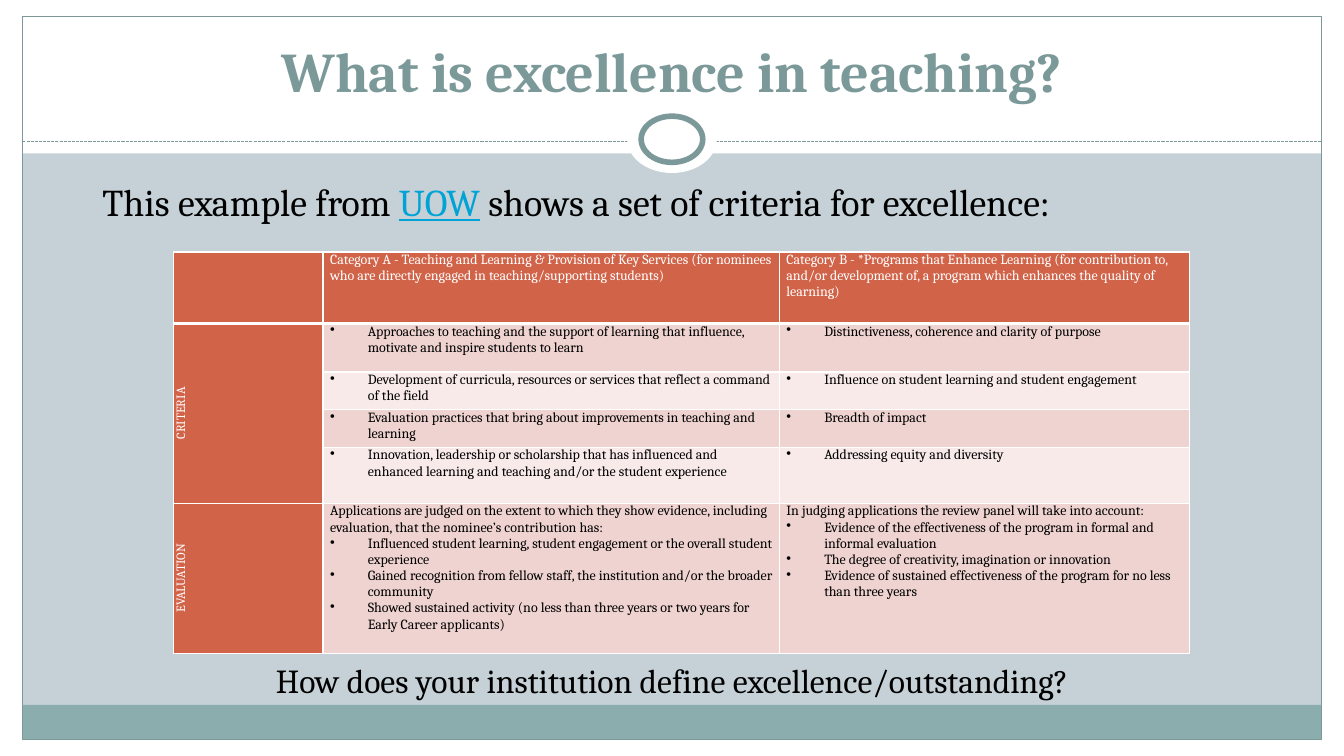
"""Builds the slide about criteria for excellence in teaching."""
from dataclasses import dataclass
from typing import Any, Optional

from lxml.etree import SubElement
from pptx import Presentation
from pptx.dml.color import RGBColor
from pptx.enum.dml import MSO_LINE
from pptx.enum.shapes import MSO_CONNECTOR, MSO_SHAPE as Preset
from pptx.enum.text import MSO_ANCHOR as Anchor, MSO_AUTO_SIZE as AutoSize, PP_ALIGN as Align
from pptx.oxml.ns import qn
from pptx.util import Pt

WIDTH, HEIGHT = 960, 540
FONT = "Cambria"
WHITE, BLACK, SAGE, BAND, MIST = "FFFFFF", "000000", "7C999A", "8CADAE", "C5D1D7"
LINK, RUST, ROSE, BLUSH = "00A3D6", "D16349", "EED3D0", "F7EAE9"
EDGE, FRAME_TOP, FRAME_BOTTOM = 16, 12, 528
RULE_Y = 100.8


@dataclass
class Panel:
    left: float
    top: float
    width: float
    height: float
    fill: Optional[str] = None
    line: Optional[str] = None
    weight: float = 0.75
    preset: Any = Preset.RECTANGLE


@dataclass
class CriteriaRow:
    height: float
    fill: str
    category_a: list[str]
    category_b: list[str]
    label: str = ""
    lead_in: bool = False
    bulleted: bool = True


MARGINS = [
    Panel(0, FRAME_BOTTOM, WIDTH, HEIGHT - FRAME_BOTTOM, WHITE),
    Panel(0, 0, WIDTH, 109.5, WHITE),
    Panel(0, 0, EDGE, HEIGHT, WHITE),
    Panel(WIDTH - EDGE, 0, EDGE, HEIGHT, WHITE),
    Panel(EDGE, 503.5, WIDTH - 2 * EDGE, 24.5, BAND),
    Panel(EDGE, FRAME_TOP, WIDTH - 2 * EDGE, FRAME_BOTTOM - FRAME_TOP, line=SAGE),
]
RINGS = [
    Panel(448, 75.6, 64, 48, WHITE, preset=Preset.OVAL),
    Panel(458, 83, 44, 33, WHITE, SAGE, 4, Preset.OVAL),
]
COLUMNS = [106.8, 326, 293]
ROWS = [
    CriteriaRow(51, RUST,
                ["Category A - Teaching and Learning & Provision of Key Services (for nominees who are "
                 "directly engaged in teaching/supporting students)"],
                ["Category B - *Programs that Enhance Learning (for contribution to, and/or development "
                 "of, a program which enhances the quality of learning)"], bulleted=False),
    CriteriaRow(34.8, ROSE,
                ["Approaches to teaching and the support of learning that influence, motivate and "
                 "inspire students to learn"],
                ["Distinctiveness, coherence and clarity of purpose"], "CRITERIA"),
    CriteriaRow(27, BLUSH,
                ["Development of curricula, resources or services that reflect a command of the field"],
                ["Influence on student learning and student engagement"]),
    CriteriaRow(26.8, ROSE,
                ["Evaluation practices that bring about improvements in teaching and learning"],
                ["Breadth of impact"]),
    CriteriaRow(40, BLUSH,
                ["Innovation, leadership or scholarship that has influenced and enhanced learning and "
                 "teaching and/or the student experience"],
                ["Addressing equity and diversity"]),
    CriteriaRow(107, ROSE,
                ["Applications are judged on the extent to which they show evidence, including "
                 "evaluation, that the nominee’s contribution has:",
                 "Influenced student learning, student engagement or the overall student experience",
                 "Gained recognition from fellow staff, the institution and/or the broader community",
                 "Showed sustained activity (no less than three years or two years for Early Career "
                 "applicants)"],
                ["In judging applications the review panel will take into account:",
                 "Evidence of the effectiveness of the program in formal and informal evaluation",
                 "The degree of creativity, imagination or innovation",
                 "Evidence of sustained effectiveness of the program for no less than three years"],
                "EVALUATION", lead_in=True),
]


def apply(target: Any, **values: Any) -> None:
    for name, value in values.items():
        setattr(target, name, value)


def paint(fill: Any, colour: str) -> None:
    fill.solid()
    fill.fore_color.rgb = RGBColor.from_string(colour)


def place(shape: Any, left: float, top: float, width: float, height: float) -> None:
    apply(shape, left=Pt(left), top=Pt(top), width=Pt(width), height=Pt(height))


def write(paragraph: Any, text: str, size: float, colour: str, bold: bool = False,
          underline: bool = False) -> None:
    run = paragraph.add_run()
    run.text = text
    apply(run.font, name=FONT, size=Pt(size), bold=bold, underline=underline)
    paint(run.font.fill, colour)


def set_bullet(paragraph: Any, mark: Optional[str], hang: float) -> None:
    properties = paragraph._p.get_or_add_pPr()
    properties.set("marL", str(Pt(hang)))
    properties.set("indent", str(-Pt(hang)))
    if mark:
        SubElement(properties, qn("a:buChar"), char=mark)
    else:
        SubElement(properties, qn("a:buNone"))


def draw_panel(shapes: Any, panel: Panel) -> None:
    shape = shapes.add_shape(panel.preset, Pt(panel.left), Pt(panel.top), Pt(panel.width), Pt(panel.height))
    shape.shadow.inherit = False
    if panel.fill:
        paint(shape.fill, panel.fill)
    else:
        shape.fill.background()
    if panel.line:
        paint(shape.line.fill, panel.line)
        shape.line.width = Pt(panel.weight)
    else:
        shape.line.fill.background()


def draw_rule(shapes: Any) -> None:
    rule = shapes.add_connector(MSO_CONNECTOR.STRAIGHT, Pt(EDGE), Pt(RULE_Y), Pt(WIDTH - EDGE), Pt(RULE_Y))
    paint(rule.line.fill, SAGE)
    apply(rule.line, width=Pt(0.75), dash_style=MSO_LINE.SQUARE_DOT)
    SubElement(rule._element.spPr, qn("a:effectLst"))


def style_cell(cell: Any, fill: str, header: bool) -> None:
    apply(cell, margin_left=Pt(5), margin_right=Pt(5), margin_top=0, margin_bottom=0)
    properties = cell._tc.get_or_add_tcPr()
    for side in ("lnL", "lnR", "lnT", "lnB"):
        weight = 3 if header and side == "lnB" else 1
        border = SubElement(properties, qn(f"a:{side}"), w=str(Pt(weight)))
        SubElement(SubElement(border, qn("a:solidFill")), qn("a:srgbClr"), val=WHITE)
    paint(cell.fill, fill)


def fill_label(cell: Any, label: str) -> None:
    cell.vertical_anchor = Anchor.MIDDLE
    cell._tc.get_or_add_tcPr().set("vert", "vert270")
    paragraph = cell.text_frame.paragraphs[0]
    apply(paragraph, alignment=Align.CENTER, space_after=Pt(6))
    write(paragraph, label, 9, WHITE)


def fill_category(cell: Any, row: CriteriaRow, items: list[str], colour: str) -> None:
    frame = cell.text_frame
    for index, item in enumerate(items):
        paragraph = frame.add_paragraph() if index else frame.paragraphs[0]
        if row.bulleted and (index or not row.lead_in):
            set_bullet(paragraph, "•", 27)
        write(paragraph, item, 10, colour)


def draw_criteria(shapes: Any) -> None:
    criteria = shapes.add_table(len(ROWS), len(COLUMNS), Pt(124), Pt(180), Pt(sum(COLUMNS)),
                                Pt(sum(row.height for row in ROWS))).table
    apply(criteria, first_row=False, horz_banding=False)
    for column, width in zip(criteria.columns, COLUMNS):
        column.width = Pt(width)
    for index, row in enumerate(ROWS):
        criteria.rows[index].height = Pt(row.height)
        header = index == 0
        label, *categories = criteria.rows[index].cells
        style_cell(label, RUST, header)
        if row.label:
            fill_label(label, row.label)
        for cell, items in zip(categories, (row.category_a, row.category_b)):
            style_cell(cell, row.fill, header)
            fill_category(cell, row, items, WHITE if header else BLACK)
    criteria.cell(1, 0).merge(criteria.cell(4, 0))


def main() -> None:
    deck = Presentation()
    apply(deck, slide_width=Pt(WIDTH), slide_height=Pt(HEIGHT))
    slide = deck.slides.add_slide(deck.slide_layouts[1])
    paint(slide.background.fill, MIST)
    shapes = slide.shapes
    heading, example = shapes.placeholders
    for panel in MARGINS:
        draw_panel(shapes, panel)
    draw_rule(shapes)
    for ring in RINGS:
        draw_panel(shapes, ring)
    for holder in (heading, example):
        shapes._spTree.append(holder._element)

    place(heading, 32, 18, 896, 60)
    apply(heading.text_frame, vertical_anchor=Anchor.BOTTOM, auto_size=AutoSize.NONE)
    write(heading.text_frame.paragraphs[0], "What is excellence in teaching?", 40, SAGE, bold=True)

    place(example, 66, 124, 828, 343)
    example.text_frame.auto_size = AutoSize.NONE
    sentence = example.text_frame.paragraphs[0]
    set_bullet(sentence, None, 0)
    write(sentence, "This example from ", 27, BLACK)
    write(sentence, "UOW", 27, LINK, underline=True)
    write(sentence, " shows a set of criteria for excellence:", 27, BLACK)

    draw_criteria(shapes)

    question = shapes.add_textbox(Pt(EDGE), Pt(468), Pt(WIDTH - 2 * EDGE), Pt(36)).text_frame
    apply(question, word_wrap=True, auto_size=AutoSize.SHAPE_TO_FIT_TEXT)
    question.paragraphs[0].alignment = Align.CENTER
    write(question.paragraphs[0], "How does your institution define excellence/outstanding?", 24, BLACK)
    deck.save("out.pptx")


if __name__ == "__main__":
    main()
